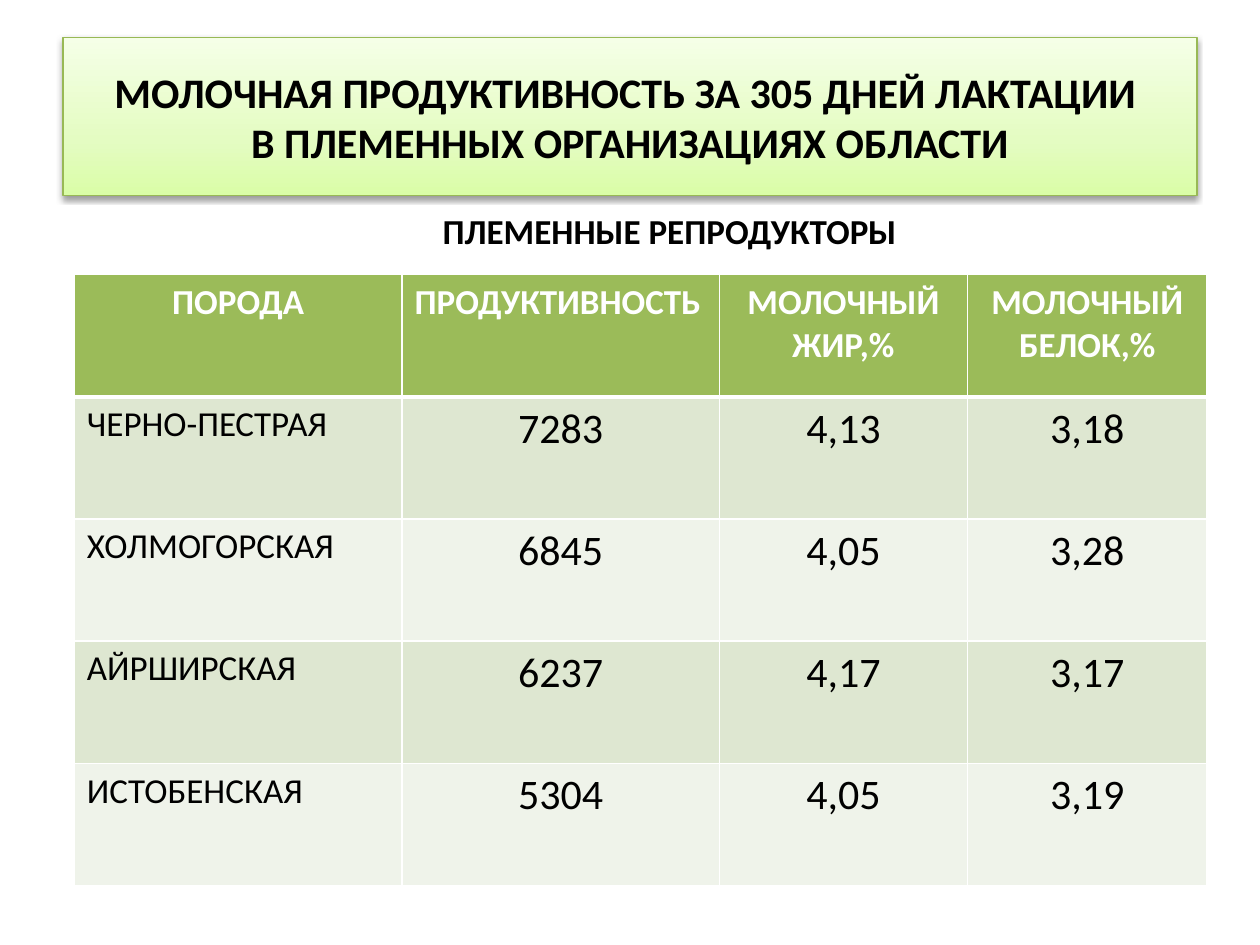
from dataclasses import dataclass

from lxml.etree import SubElement
from pptx import Presentation
from pptx.dml.color import RGBColor
from pptx.enum.shapes import MSO_SHAPE
from pptx.enum.text import MSO_ANCHOR, PP_ALIGN
from pptx.oxml import parse_xml
from pptx.oxml.ns import nsdecls, qn
from pptx.util import Inches, Pt


@dataclass(frozen=True)
class Theme:
    """Colours, font and type sizes of the slide."""
    font: str = "Calibri"
    ink: str = "000000"
    paper: str = "FFFFFF"
    header: str = "9BBB59"
    bands: tuple = ("DEE7D1", "EFF3EA")
    outline: str = "98B955"
    gradient: tuple = ((0, "DAFDA7"), (35, "E4FCC2"), (100, "F5FFE7"))
    large: int = 24
    medium: int = 20


THEME = Theme()
WIDTH, HEIGHT = 10, 7.5
COLUMNS = (2.6, 2.52, 1.97, 1.9)
ROW_HEIGHT = 0.97
HEADINGS = ("ПОРОДА", "ПРОДУКТИВНОСТЬ", "МОЛОЧНЫЙ ЖИР,%", "МОЛОЧНЫЙ БЕЛОК,%")
BREEDS = (
    ("ЧЕРНО-ПЕСТРАЯ", "7283", "4,13", "3,18"),
    ("ХОЛМОГОРСКАЯ", "6845", "4,05", "3,28"),
    ("АЙРШИРСКАЯ", "6237", "4,17", "3,17"),
    ("ИСТОБЕНСКАЯ", "5304", "4,05", "3,19"),
)


def write(frame, text, size=THEME.medium, color=THEME.ink, bold=False, align=PP_ALIGN.CENTER):
    """Put one formatted paragraph into a text frame."""
    frame.word_wrap = True
    para = frame.paragraphs[0]
    para.text = text
    para.alignment = align
    for span in para.runs:
        span.font.name = THEME.font
        span.font.size = Pt(size)
        span.font.bold = bold
        span.font.color.rgb = RGBColor.from_string(color)


def shade(box):
    """Give a box the theme gradient and a soft shadow below it."""
    stops = "".join(
        f'<a:gs pos="{share * 1000}"><a:srgbClr val="{color}"/></a:gs>'
        for share, color in THEME.gradient
    )
    gradient = parse_xml(
        f'<a:gradFill {nsdecls("a")} rotWithShape="1"><a:gsLst>{stops}</a:gsLst>'
        '<a:lin ang="16200000" scaled="1"/></a:gradFill>'
    )
    shadow = parse_xml(
        f'<a:effectLst {nsdecls("a")}><a:outerShdw blurRad="{Pt(3.1)}" dist="{Pt(1.6)}" '
        f'dir="5400000" rotWithShape="0"><a:srgbClr val="{THEME.ink}">'
        '<a:alpha val="38000"/></a:srgbClr></a:outerShdw></a:effectLst>'
    )
    properties = box.fill._xPr
    properties.find(qn("a:prstGeom")).addnext(gradient)
    properties.find(qn("a:ln")).addnext(shadow)


def add_banner(page, text):
    """Add the shaded title box."""
    box = page.shapes.add_shape(
        MSO_SHAPE.RECTANGLE, Inches(WIDTH * 0.05), Inches(HEIGHT * 0.04),
        Inches(WIDTH * 0.9), Inches(HEIGHT / 6),
    )
    box.line.color.rgb = RGBColor.from_string(THEME.outline)
    box.line.width = Pt(0.75)
    shade(box)
    box.text_frame.vertical_anchor = MSO_ANCHOR.MIDDLE
    write(box.text_frame, text, size=THEME.large, bold=True)


def add_caption(page, text):
    """Add the centred caption above the table."""
    box = page.shapes.add_textbox(Inches(1.38), Inches(1.61), Inches(7.87), Inches(0.44))
    write(box.text_frame, text, bold=True)


def add_borders(cell, top, bottom):
    """Draw the four borders of a cell, widths in points."""
    properties = cell._tc.get_or_add_tcPr()
    for side, width in (("L", 1), ("R", 1), ("T", top), ("B", bottom)):
        border = SubElement(properties, qn(f"a:ln{side}"), w=str(Pt(width)))
        fill = SubElement(border, qn("a:solidFill"))
        SubElement(fill, qn("a:srgbClr"), val=THEME.paper)


def fill_cell(cell, row, column, text):
    """Format a cell by its place in the table."""
    heading = row == 0
    add_borders(cell, top=3 if row == 1 else 1, bottom=3 if heading else 1)
    cell.fill.solid()
    color = THEME.header if heading else THEME.bands[(row - 1) % 2]
    cell.fill.fore_color.rgb = RGBColor.from_string(color)
    left = column == (1 if heading else 0)
    write(
        cell.text_frame, text,
        size=THEME.medium if heading or column == 0 else THEME.large,
        color=THEME.paper if heading else THEME.ink,
        bold=heading,
        align=PP_ALIGN.LEFT if left else PP_ALIGN.CENTER,
    )


def add_breeds(page):
    """Add the table of breeds."""
    rows = (HEADINGS, *BREEDS)
    table = page.shapes.add_table(
        len(rows), len(COLUMNS), Inches(0.59), Inches(2.18),
        Inches(sum(COLUMNS)), Inches(ROW_HEIGHT * len(rows)),
    ).table
    for column, width in zip(table.columns, COLUMNS):
        column.width = Inches(width)
    for row, texts in enumerate(rows):
        table.rows[row].height = Inches(ROW_HEIGHT)
        for column, text in enumerate(texts):
            fill_cell(table.cell(row, column), row, column, text)


def main():
    """Build the slide and save it."""
    deck = Presentation()
    deck.slide_width, deck.slide_height = Inches(WIDTH), Inches(HEIGHT)
    page = deck.slides.add_slide(deck.slide_layouts[6])
    add_banner(page, "МОЛОЧНАЯ ПРОДУКТИВНОСТЬ ЗА 305 ДНЕЙ ЛАКТАЦИИ \vВ ПЛЕМЕННЫХ ОРГАНИЗАЦИЯХ ОБЛАСТИ")
    add_breeds(page)
    add_caption(page, "ПЛЕМЕННЫЕ РЕПРОДУКТОРЫ")
    deck.save("out.pptx")


if __name__ == "__main__":
    main()
